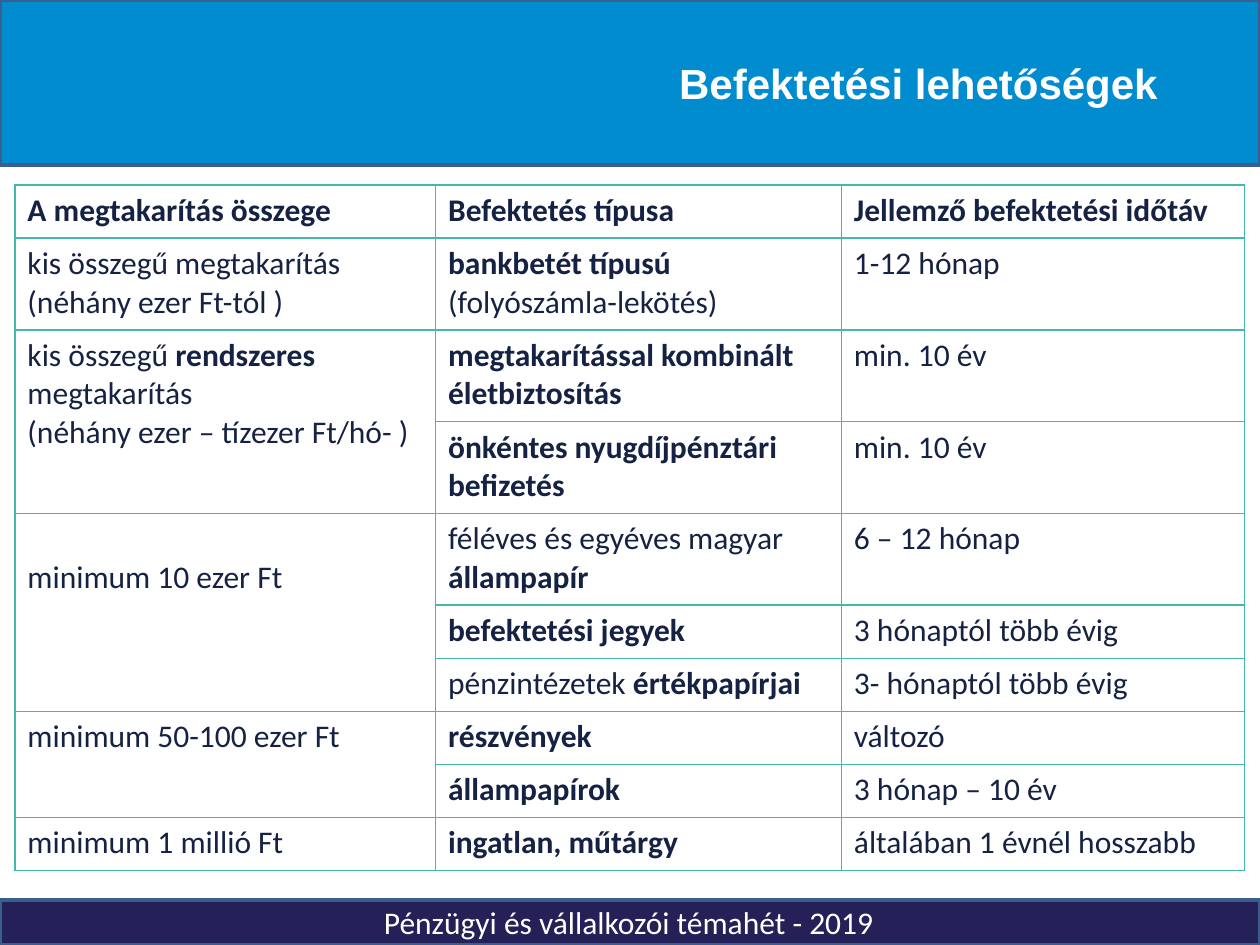
from dataclasses import dataclass

from lxml import etree
from pptx import Presentation
from pptx.dml.color import RGBColor
from pptx.enum.shapes import MSO_SHAPE
from pptx.enum.text import MSO_ANCHOR, PP_ALIGN
from pptx.oxml.ns import qn
from pptx.util import Cm, Pt

RECTANGLE = MSO_SHAPE.RECTANGLE
MIDDLE = MSO_ANCHOR.MIDDLE
CENTER = PP_ALIGN.CENTER

WHITE = RGBColor(0xFF, 0xFF, 0xFF)
BLUE = RGBColor(0x00, 0x8C, 0xCF)
NAVY = RGBColor(0x23, 0x21, 0x57)
BAND_EDGE = RGBColor(0x3A, 0x5F, 0x8C)
INK = RGBColor(0x15, 0x22, 0x43)
TEAL = RGBColor(0x45, 0xB8, 0xAB)

TITLE_FORMAT = {"name": "Arial", "size": Pt(24), "bold": True}
BODY_FORMAT = {"name": "Calibri", "size": Pt(18)}
TITLE_ONLY = 5
PAGE_WIDTH = 25.4


@dataclass(frozen=True)
class Span:
    text: str
    bold: bool = False


@dataclass(frozen=True)
class Band:
    top: float
    height: float
    color: RGBColor


@dataclass(frozen=True)
class Entry:
    """A table cell: paragraphs of spans, the rows it covers and its top margin."""
    paragraphs: tuple
    rows: int = 1
    margin_top: float = 0.13


def plain(text: str, **options) -> Entry:
    return Entry(((Span(text),),), **options)


def bold(text: str) -> Entry:
    return Entry(((Span(text, True),),))


def mixed(*spans: Span) -> Entry:
    return Entry((spans,))


BANDS = (Band(0, 3.33, BLUE), Band(18.14, 0.91, NAVY))
COLUMN_WIDTHS = (8.48, 8.18, 8.13)
SINGLE, DOUBLE = 1.07, 1.85
ROW_HEIGHTS = (SINGLE,) + (DOUBLE,) * 4 + (SINGLE,) * 5

# None marks a cell covered by the merged cell above it
ROWS = (
    (bold("A megtakarítás összege"), bold("Befektetés típusa"),
     bold("Jellemző befektetési időtáv")),
    (plain("kis összegű megtakarítás (néhány ezer Ft-tól )"),
     mixed(Span("bankbetét típusú ", True), Span("(folyószámla-lekötés)")),
     plain("1-12 hónap")),
    (Entry(((Span("kis összegű "), Span("rendszeres ", True), Span("megtakarítás")),
            (Span("(néhány ezer – tízezer Ft/hó- )"),)), rows=2),
     bold("megtakarítással kombinált életbiztosítás"), plain("min. 10 év")),
    (None, bold("önkéntes nyugdíjpénztári befizetés"), plain("min. 10 év")),
    (plain("minimum 10 ezer Ft", rows=3, margin_top=0.9),
     mixed(Span("féléves és egyéves magyar "), Span("állampapír", True)),
     plain("6 – 12 hónap")),
    (None, bold("befektetési jegyek"), plain("3 hónaptól több évig")),
    (None, mixed(Span("pénzintézetek "), Span("értékpapírjai", True)),
     plain("3- hónaptól több évig")),
    (plain("minimum 50-100 ezer Ft", rows=2), bold("részvények"), plain("változó")),
    (None, bold("állampapírok"), plain("3 hónap – 10 év")),
    (plain("minimum 1 millió Ft"), bold("ingatlan, műtárgy"),
     plain("általában 1 évnél hosszabb")),
)


def apply_format(font, values: dict, color: RGBColor) -> None:
    for name, value in values.items():
        setattr(font, name, value)
    font.color.rgb = color


def draw_band(page, band: Band) -> None:
    shape = page.shapes.add_shape(
        RECTANGLE, 0, Cm(band.top), Cm(PAGE_WIDTH), Cm(band.height))
    shape.shadow.inherit = False
    shape.fill.solid()
    shape.fill.fore_color.rgb = band.color
    shape.line.color.rgb = BAND_EDGE
    shape.line.width = Pt(2)


def draw_title(page, text: str) -> None:
    title = page.shapes.title
    title.left, title.top, title.width, title.height = (
        Cm(11.91), Cm(0), Cm(13.21), Cm(3.35))
    title.text_frame.text = text
    title.text_frame.vertical_anchor = MIDDLE
    para = title.text_frame.paragraphs[0]
    para.alignment = CENTER
    apply_format(para.runs[0].font, TITLE_FORMAT, WHITE)
    # Bring the title in front of the bands
    title.element.getparent().append(title.element)


def draw_footer(page, text: str) -> None:
    box = page.shapes.add_textbox(Cm(7.49), Cm(18.08), Cm(10.39), Cm(1.02))
    box.text_frame.word_wrap = True
    span = box.text_frame.paragraphs[0].add_run()
    span.text = text
    apply_format(span.font, BODY_FORMAT, WHITE)


def add_borders(cell) -> None:
    properties = cell._tc.get_or_add_tcPr()
    for side in ("lnL", "lnR", "lnT", "lnB"):
        line = etree.SubElement(properties, qn(f"a:{side}"), w=str(Pt(1)))
        fill = etree.SubElement(line, qn("a:solidFill"))
        etree.SubElement(fill, qn("a:srgbClr"), val=str(TEAL))


def write_entry(cell, entry: Entry) -> None:
    cell.margin_top = Cm(entry.margin_top)
    frame = cell.text_frame
    for index, spans in enumerate(entry.paragraphs):
        para = frame.add_paragraph() if index else frame.paragraphs[0]
        for part in spans:
            span = para.add_run()
            span.text = part.text
            apply_format(span.font, {**BODY_FORMAT, "bold": part.bold}, INK)


def draw_table(page) -> None:
    table = page.shapes.add_table(
        len(ROWS), len(COLUMN_WIDTHS), Cm(0.3), Cm(3.73),
        Cm(sum(COLUMN_WIDTHS)), Cm(sum(ROW_HEIGHTS))).table
    table.first_row = table.horz_banding = False
    for column, width in zip(table.columns, COLUMN_WIDTHS):
        column.width = Cm(width)
    for row, height in zip(table.rows, ROW_HEIGHTS):
        row.height = Cm(height)
    for row_index, entries in enumerate(ROWS):
        for column_index, entry in enumerate(entries):
            cell = table.cell(row_index, column_index)
            add_borders(cell)
            cell.fill.background()
            if entry is None:
                continue
            write_entry(cell, entry)
            if entry.rows > 1:
                cell.merge(table.cell(row_index + entry.rows - 1, column_index))


def main() -> None:
    deck = Presentation()
    deck.slide_width, deck.slide_height = Cm(PAGE_WIDTH), Cm(19.05)
    page = deck.slides.add_slide(deck.slide_layouts[TITLE_ONLY])
    for band in BANDS:
        draw_band(page, band)
    draw_footer(page, "Pénzügyi és vállalkozói témahét - 2019")
    draw_title(page, "Befektetési lehetőségek")
    draw_table(page)
    deck.save("out.pptx")


if __name__ == "__main__":
    main()
